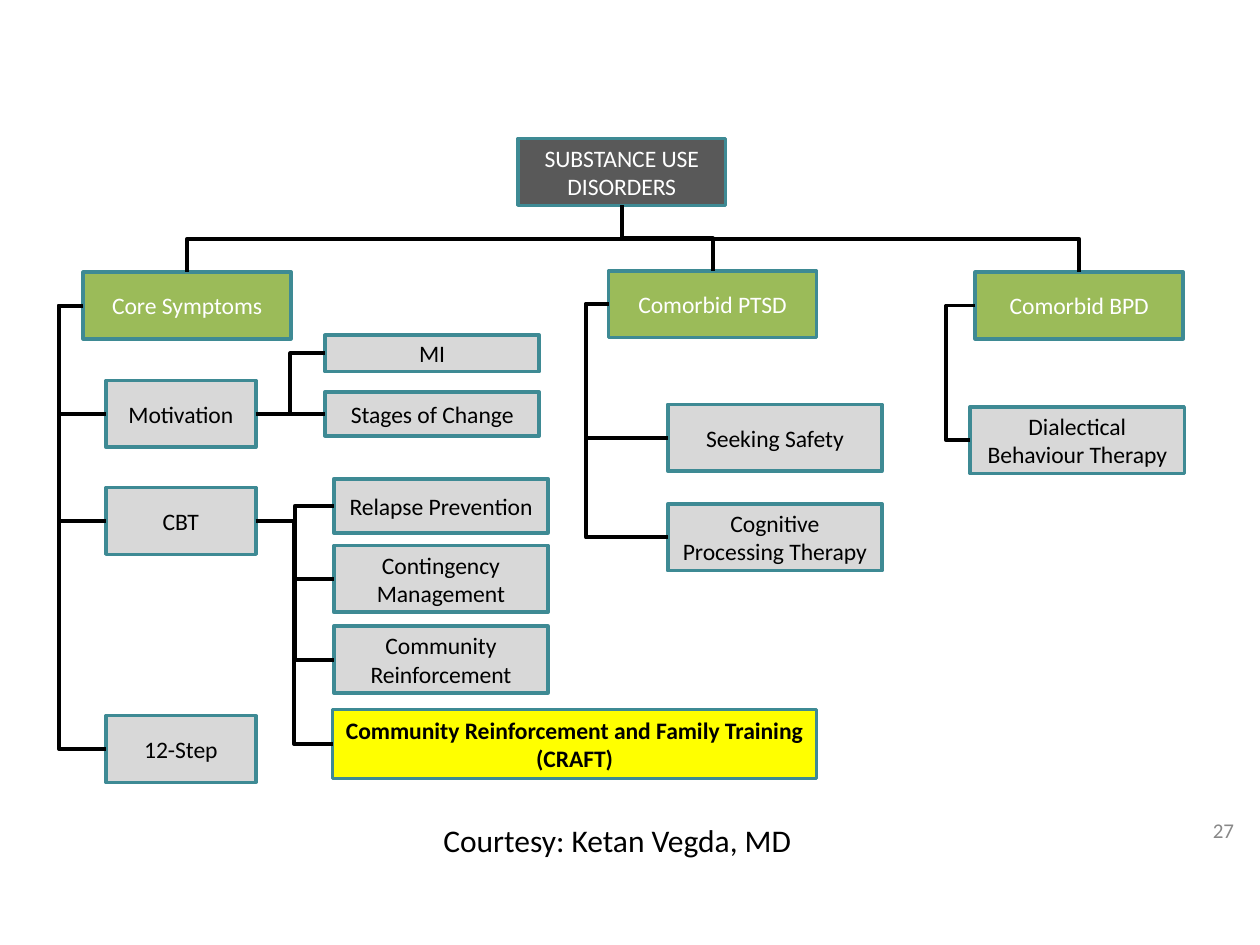
from dataclasses import dataclass

from lxml.etree import SubElement
from pptx import Presentation
from pptx.dml.color import RGBColor
from pptx.enum.shapes import MSO_CONNECTOR, MSO_SHAPE
from pptx.enum.text import MSO_ANCHOR as Anchor, PP_ALIGN as Align
from pptx.oxml.ns import qn
from pptx.util import Inches, Pt

WHITE = RGBColor(0xFF, 0xFF, 0xFF)
BLACK = RGBColor(0, 0, 0)
TEAL = RGBColor(0x3E, 0x8A, 0x94)
DARK_GRAY = RGBColor(0x59, 0x59, 0x59)
LIGHT_GRAY = RGBColor(0xD8, 0xD8, 0xD8)
NUMBER_GRAY = RGBColor(0x88, 0x88, 0x88)
GREEN = RGBColor(0x9B, 0xBB, 0x59)
YELLOW = RGBColor(0xFF, 0xFF, 0)

FONT = "Calibri"
TOP, LEFT, BOTTOM, RIGHT = range(4)


@dataclass(frozen=True)
class Level:
    """Look shared by the boxes of one level of the tree."""
    fill: RGBColor
    color: RGBColor
    width: float
    bold: bool = False


@dataclass(frozen=True)
class Node:
    text: str
    level: Level
    left: float
    top: float
    height: float = 0.53


ROOT = Level(DARK_GRAY, WHITE, 1.65)
BRANCH = Level(GREEN, WHITE, 1.65)
GROUP = Level(LIGHT_GRAY, BLACK, 1.19)
THERAPY = Level(LIGHT_GRAY, BLACK, 1.7)
HIGHLIGHT = Level(YELLOW, BLACK, 3.84, bold=True)

NODES = {
    "root": Node("SUBSTANCE USE DISORDERS", ROOT, 4.11, 1.1),
    "core": Node("Core Symptoms", BRANCH, 0.66, 2.16),
    "ptsd": Node("Comorbid PTSD", BRANCH, 4.83, 2.15),
    "bpd": Node("Comorbid BPD", BRANCH, 7.74, 2.16),
    "motivation": Node("Motivation", GROUP, 0.84, 3.02),
    "cbt": Node("CBT", GROUP, 0.84, 3.87),
    "twelve_step": Node("12-Step", GROUP, 0.84, 5.68),
    "mi": Node("MI", THERAPY, 2.58, 2.66, 0.29),
    "stages": Node("Stages of Change", THERAPY, 2.58, 3.11, 0.35),
    "relapse": Node("Relapse Prevention", THERAPY, 2.65, 3.8, 0.43),
    "contingency": Node("Contingency Management", THERAPY, 2.65, 4.33),
    "community": Node("Community Reinforcement", THERAPY, 2.65, 4.97),
    "craft": Node("Community Reinforcement and Family Training\n(CRAFT)",
                  HIGHLIGHT, 2.64, 5.63, 0.55),
    "safety": Node("Seeking Safety", THERAPY, 5.3, 3.21),
    "processing": Node("Cognitive Processing Therapy", THERAPY, 5.3, 4),
    "dialectical": Node("Dialectical Behaviour Therapy", THERAPY, 7.7, 3.23),
}

# Parent: x of the shared spine left of the boxes, children
SIDE_TREES = {
    "core": (0.47, ("motivation", "cbt", "twelve_step")),
    "ptsd": (4.65, ("safety", "processing")),
    "bpd": (7.51, ("dialectical",)),
}

# Parent: children to its right, with the spine halfway between
RIGHT_TREES = {
    "motivation": ("mi", "stages"),
    "cbt": ("relapse", "contingency", "community", "craft"),
}


def write(frame, text: str, size: float, color: RGBColor,
          align: Align, bold: bool = False) -> None:
    frame.word_wrap = True
    for index, line in enumerate(text.split("\n")):
        paragraph = frame.add_paragraph() if index else frame.paragraphs[0]
        paragraph.alignment = align
        run = paragraph.add_run()
        run.text = line
        run.font.name = FONT
        run.font.size = Pt(size)
        run.font.bold = bold
        run.font.color.rgb = color


def add_node(slide, node: Node):
    level = node.level
    box = slide.shapes.add_shape(
        MSO_SHAPE.RECTANGLE, Inches(node.left), Inches(node.top),
        Inches(level.width), Inches(node.height))
    box.shadow.inherit = False
    box.fill.solid()
    box.fill.fore_color.rgb = level.fill
    box.line.color.rgb = TEAL
    box.line.width = Pt(2)
    box.text_frame.vertical_anchor = Anchor.MIDDLE
    write(box.text_frame, node.text, 13.5, level.color, Align.CENTER, level.bold)
    return box


def add_elbow(slide, parent, parent_side: int, child, child_side: int):
    elbow = slide.shapes.add_connector(MSO_CONNECTOR.ELBOW, 0, 0, 0, 0)
    elbow.begin_connect(parent, parent_side)
    elbow.end_connect(child, child_side)
    elbow.line.color.rgb = BLACK
    elbow.line.width = Pt(2.25)
    SubElement(elbow._element.spPr, qn("a:effectLst"))
    return elbow


def set_bend(elbow, bend_x: int) -> None:
    """Put the middle segment of a sideways elbow at bend_x."""
    share = (bend_x - elbow.begin_x) / (elbow.end_x - elbow.begin_x)
    geometry = elbow._element.spPr.find(qn("a:prstGeom"))
    guides = geometry.find(qn("a:avLst"))
    if guides is None:
        guides = SubElement(geometry, qn("a:avLst"))
    SubElement(guides, qn("a:gd"), name="adj1", fmla=f"val {round(share * 100000)}")


def turn_downward(elbow) -> None:
    """Turn an elbow a quarter so that it leaves and arrives vertically."""
    x1, y1, x2, y2 = elbow.begin_x, elbow.begin_y, elbow.end_x, elbow.end_y
    goes_right = x2 > x1
    center_x, center_y = (x1 + x2) // 2, (y1 + y2) // 2
    half_run = (y2 - y1) // 2 * (-1 if goes_right else 1)
    half_rise = abs(x2 - x1) // 2
    elbow.begin_x, elbow.end_x = center_x - half_run, center_x + half_run
    elbow.begin_y, elbow.end_y = center_y - half_rise, center_y + half_rise
    degrees = 270 if goes_right else 90
    elbow._element.spPr.find(qn("a:xfrm")).set("rot", str(degrees * 60000))


def add_label(slide, text: str, box: tuple[float, ...], size: float,
              color: RGBColor, align: Align, anchor: Anchor) -> None:
    label = slide.shapes.add_textbox(*map(Inches, box))
    label.text_frame.vertical_anchor = anchor
    write(label.text_frame, text, size, color, align)


def main() -> None:
    prs = Presentation()
    prs.slide_width, prs.slide_height = Inches(10), Inches(7.5)
    slide = prs.slides.add_slide(prs.slide_layouts[6])

    # Boxes
    boxes = {key: add_node(slide, node) for key, node in NODES.items()}

    # Root to the three branches
    for branch in SIDE_TREES:
        turn_downward(add_elbow(slide, boxes["root"], BOTTOM, boxes[branch], TOP))

    # Branches to the boxes below them
    for parent, (spine, children) in SIDE_TREES.items():
        for child in children:
            elbow = add_elbow(slide, boxes[parent], LEFT, boxes[child], LEFT)
            set_bend(elbow, Inches(spine))

    # Groups to their therapies
    for parent, children in RIGHT_TREES.items():
        for child in children:
            add_elbow(slide, boxes[parent], RIGHT, boxes[child], LEFT)

    # Credit and slide number
    add_label(slide, "Courtesy: Ketan Vegda, MD", (3.42, 6.47, 3.11, 0.4),
              18, BLACK, Align.LEFT, Anchor.TOP)
    add_label(slide, "27", (9.5, 6.42, 0.42, 0.33),
              12, NUMBER_GRAY, Align.CENTER, Anchor.MIDDLE)

    prs.save("out.pptx")


if __name__ == "__main__":
    main()
